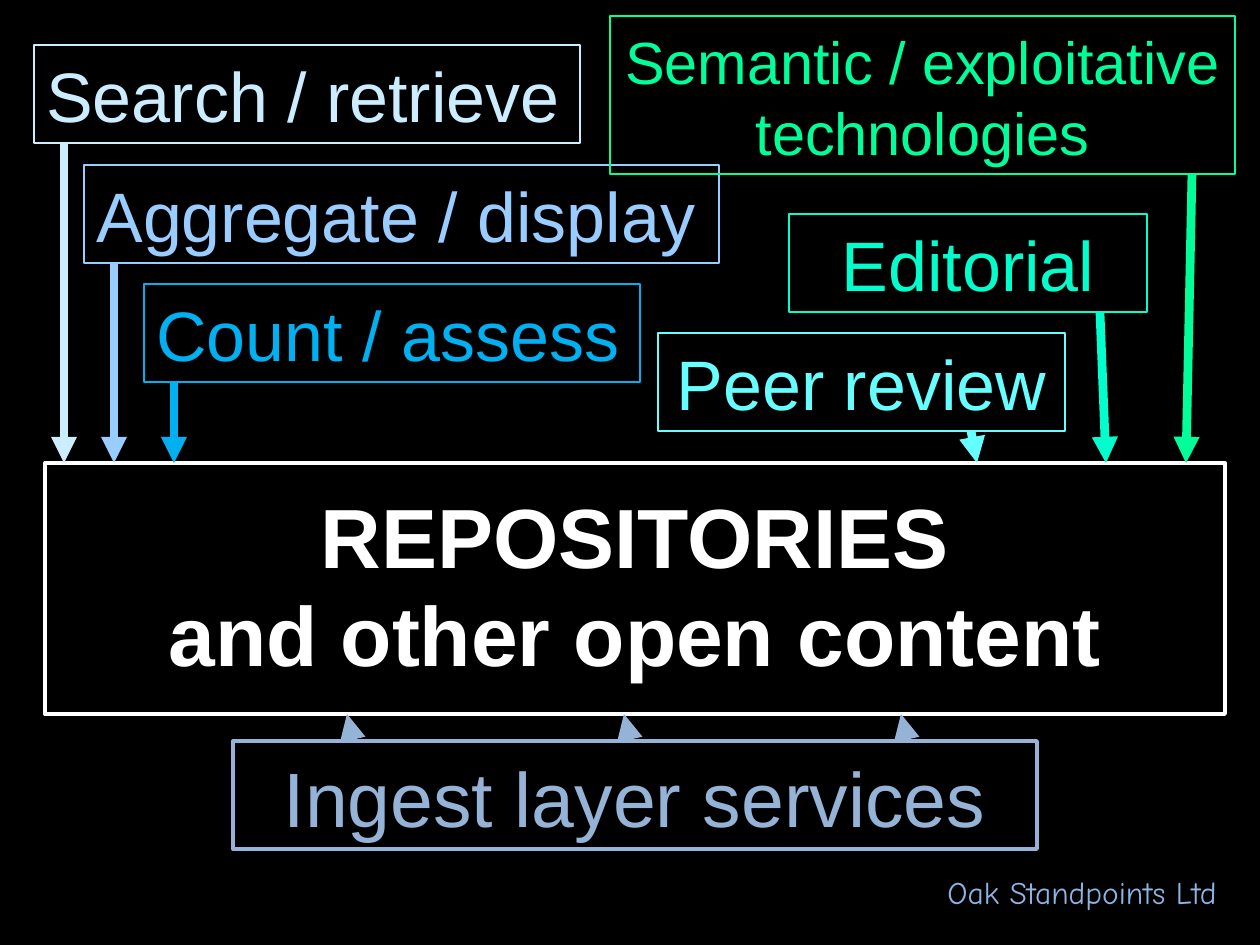
from lxml import etree
from pptx import Presentation, util as u
from pptx.dml.color import RGBColor
from pptx.enum import shapes, text
from pptx.oxml.ns import qn

PX = 914400 / 126
LEFT, MID, RIGHT = text.PP_ALIGN.LEFT, text.PP_ALIGN.CENTER, text.PP_ALIGN.RIGHT
TOP, CORE, LOW = (text.MSO_ANCHOR.TOP, text.MSO_ANCHOR.MIDDLE,
                  text.MSO_ANCHOR.BOTTOM)

HUB = (45, 463, 1180, 251)
INGEST = (233, 741, 804, 108)
CREDIT = (861, 867, 368, 50)

# label, box, colour, size, alignment, line width, arrow offset, arrow lean
TOOLS = [
    ("Search / retrieve", (34, 45, 546, 98), "CCECFF", 40, LEFT, 0.75, 30, 0),
    ("Aggregate / display", (84, 165, 635, 98), "99CCFF", 40, LEFT, 0.75, 30, 0),
    ("Count / assess", (144, 284, 496, 98), "00B0F0", 40, LEFT, 0.75, 30, 0),
    ("Peer review", (658, 333, 407, 98), "66FFFF", 40, MID, 1, 313, 6),
    ("Semantic / exploitative technologies", (610, 16, 625, 158),
     "00FF99", 34, MID, 0.75, 582, -6),
    ("Editorial", (789, 214, 358, 98), "00FFCC", 40, MID, 0.75, 311, 6),
]


def emu(*nums):
    return [u.Emu(round(n * PX)) for n in nums]


def rgb(code):
    return RGBColor.from_string(code)


def write(shape, lines, hue, size, align, anchor, **font):
    """Fill a shape with one paragraph per line."""
    frame = shape.text_frame
    frame.word_wrap = True
    frame.vertical_anchor = anchor
    look = {"name": "Arial", "size": u.Pt(size), **font}
    for i, line in enumerate(lines):
        para = frame.add_paragraph() if i else frame.paragraphs[0]
        para.alignment = align
        run = para.add_run()
        run.text = line
        for key, value in look.items():
            setattr(run.font, key, value)
        run.font.color.rgb = rgb(hue)
    return frame


def frame_box(slide, box, hue, width):
    """Unfilled rectangle with a coloured outline."""
    shape = slide.shapes.add_shape(shapes.MSO_SHAPE.RECTANGLE, *emu(*box))
    shape.shadow.inherit = False
    shape.fill.background()
    shape.line.color.rgb = rgb(hue)
    shape.line.width = u.Pt(width)
    return shape


def arrow(slide, start, end, hue):
    line = slide.shapes.add_connector(
        shapes.MSO_CONNECTOR.STRAIGHT, *emu(*start, *end))
    line.line.color.rgb = rgb(hue)
    line.line.width = u.Pt(5)
    etree.SubElement(line.line._get_or_add_ln(), qn("a:tailEnd"), type="triangle")
    etree.SubElement(line._element.spPr, qn("a:effectLst"))


def hub(slide, box):
    shape = frame_box(slide, box, "FFFFFF", 2.25)
    lines = ["REPOSITORIES", "and other open content"]
    frame = write(shape, lines, "FFFFFF", 48, MID, CORE, bold=True)
    for para in frame.paragraphs:
        para.line_spacing = 0.97


def ingest(slide, box, goal):
    """Lower service with three evenly spaced arrows up to the hub."""
    hue = "95B3D7"
    x, y, wide, _ = box
    shape = frame_box(slide, box, hue, 2.25)
    write(shape, ["Ingest layer services"], hue, 44, MID, LOW)
    for i in range(3):
        foot = x + 120 + 277 * i
        arrow(slide, (foot, y), (foot - 6, goal), hue)


def tool(slide, box, goal, label, hue, size, align, width, dx, lean):
    """Upper service with one arrow down to the hub."""
    x, y, _, high = box
    shape = frame_box(slide, box, hue, width)
    write(shape, [label], hue, size, align, LOW)
    arrow(slide, (x + dx, y + high), (x + dx + lean, goal), hue)


def credit(slide, box):
    shape = slide.shapes.add_textbox(*emu(*box))
    write(shape, ["Oak Standpoints Ltd"], "8EB4E3", 18, RIGHT, TOP,
          name="Comic Neue")


def main():
    deck = Presentation()
    deck.slide_width, deck.slide_height = emu(1260, 945)
    slide = deck.slides.add_slide(deck.slide_layouts[6])
    back = slide.background.fill
    back.solid()
    back.fore_color.rgb = rgb("000000")

    _, top, _, high = HUB
    hub(slide, HUB)
    ingest(slide, INGEST, top + high)
    for label, box, *rest in TOOLS:
        tool(slide, box, top, label, *rest)
    credit(slide, CREDIT)
    deck.save("out.pptx")


if __name__ == "__main__":
    main()
